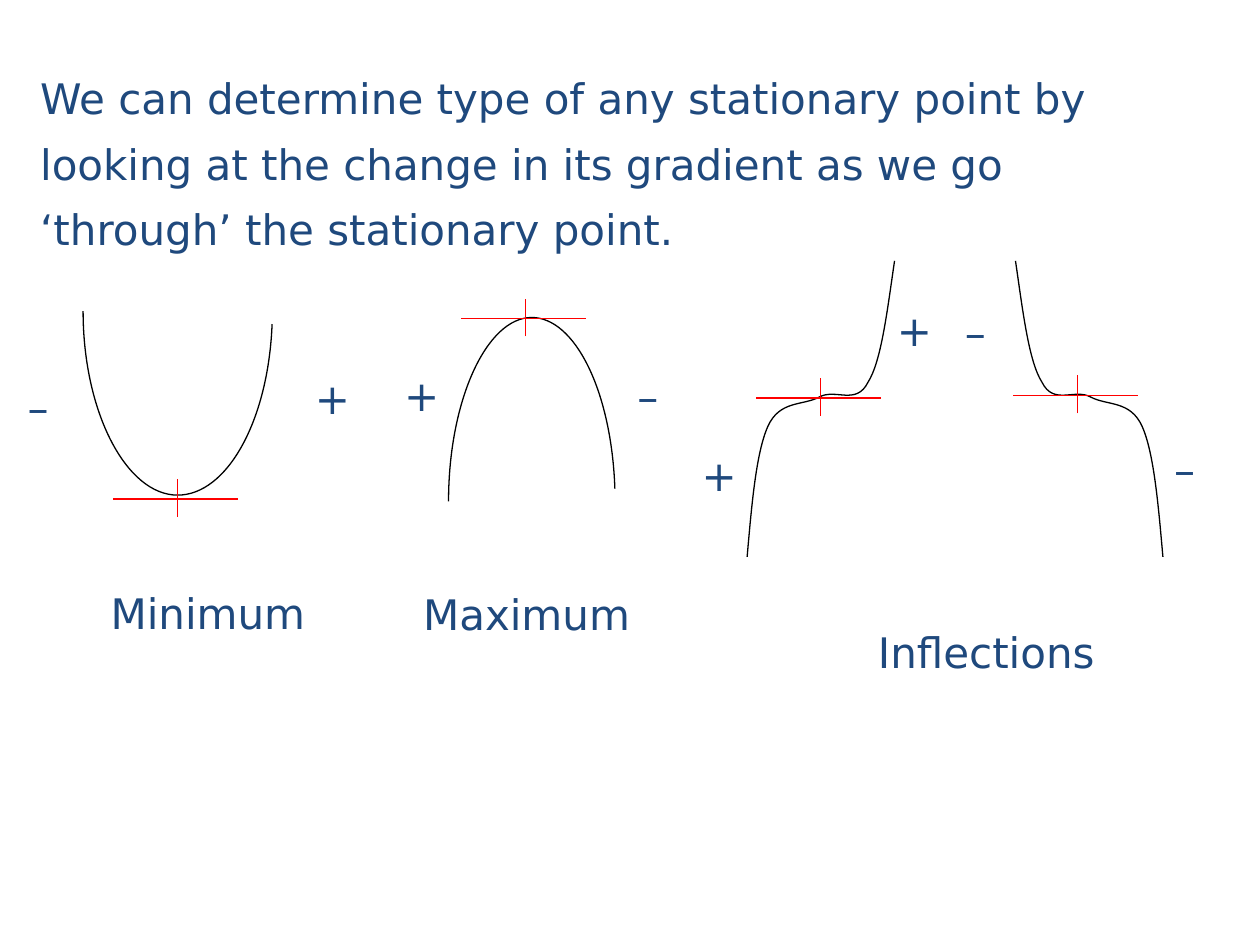
from lxml.etree import SubElement
from pptx import Presentation
from pptx.dml.color import RGBColor
from pptx.enum.shapes import MSO_CONNECTOR as Connector
from pptx.enum.text import MSO_AUTO_SIZE as AutoSize
from pptx.oxml.ns import qn
from pptx.util import Inches, Pt

NAVY = RGBColor(0x1F, 0x49, 0x7D)
RED = RGBColor(0xFF, 0x00, 0x00)
BLACK = RGBColor(0x00, 0x00, 0x00)
FONT = "DejaVu Sans"
LINE_WIDTH = Pt(0.75)

# Bezier points as fractions of the width and height of the curve's box
ARCH = [(0, 1), (0, 0.45), (0.23, 0), (0.5, 0),
        (0.76, 0), (0.98, 0.4), (1, 0.93)]
INFLECTION = [(0, 1), (0.03, 0.83), (0.06, 0.65), (0.14, 0.56),
              (0.22, 0.47), (0.38, 0.49), (0.49, 0.46),
              (0.6, 0.43), (0.74, 0.49), (0.82, 0.41),
              (0.91, 0.34), (0.95, 0.17), (1, 0)]


def bend_segments(curve):
    """Turn each three straight segments into one cubic Bezier segment."""
    outline = curve._element.find(".//" + qn("a:path"))
    segments = outline.findall(qn("a:lnTo"))
    for first in range(0, len(segments), 3):
        bezier = SubElement(outline, qn("a:cubicBezTo"))
        for segment in segments[first:first + 3]:
            bezier.append(segment[0])
            outline.remove(segment)


def add_curve(slide, controls, left, top, width, height,
              flip_x=False, flip_y=False):
    points = [(Inches(left + width * (1 - x if flip_x else x)),
               Inches(top + height * (1 - y if flip_y else y)))
              for x, y in controls]
    builder = slide.shapes.build_freeform(*points[0], scale=1.0)
    builder.add_line_segments(points[1:], close=False)
    curve = builder.convert_to_shape()
    bend_segments(curve)
    curve.shadow.inherit = False
    curve.fill.background()
    curve.line.color.rgb = BLACK
    curve.line.width = LINE_WIDTH


def add_line(group, *ends):
    connector = group.shapes.add_connector(
        Connector.STRAIGHT, *[Inches(value) for value in ends])
    connector.line.color.rgb = RED
    connector.line.width = LINE_WIDTH
    SubElement(connector._element.spPr, qn("a:effectLst"))


def add_tangent(slide, x, y):
    """Mark the stationary point at (x, y) with a flat tangent and a tick."""
    group = slide.shapes.add_group_shape()
    add_line(group, x - 0.51, y, x + 0.48, y)
    add_line(group, x, y + 0.14, x, y - 0.16)


def add_text(slide, text, left, top, width, height=0.5, line_spacing=1.0):
    box = slide.shapes.add_textbox(
        Inches(left), Inches(top), Inches(width), Inches(height))
    text_frame = box.text_frame
    text_frame.word_wrap = True
    text_frame.auto_size = AutoSize.SHAPE_TO_FIT_TEXT
    text_frame.text = text
    paragraph = text_frame.paragraphs[0]
    paragraph.line_spacing = line_spacing
    font = paragraph.runs[0].font
    font.name = FONT
    font.size = Pt(24)
    font.color.rgb = NAVY


def add_turning_point(slide, name, left, top, width, height,
                      tangent, signs, label, is_minimum=False):
    """Draw an arch with its tangent, the signs on both sides and its name."""
    add_curve(slide, ARCH, left, top, width, height, flip_y=is_minimum)
    add_tangent(slide, *tangent)
    for sign, x, y, sign_width in signs:
        add_text(slide, sign, x, y, sign_width)
    add_text(slide, name, *label, 1.86)


def add_inflection(slide, sign, left, top, width, height,
                   tangent, sign_width, sign_places, falling=False):
    add_curve(slide, INFLECTION, left, top, width, height, flip_x=falling)
    add_tangent(slide, *tangent)
    for x, y in sign_places:
        add_text(slide, sign, x, y, sign_width)


def main():
    presentation = Presentation()
    presentation.slide_width = Inches(10)
    presentation.slide_height = Inches(7.5)
    slide = presentation.slides.add_slide(presentation.slide_layouts[6])

    add_text(slide, "We can determine type of any stationary point by looking "
             "at the change in its gradient as we go ‘through’ the "
             "stationary point.", 0.22, 0.41, 9.32, 1.66, line_spacing=1.3)
    add_turning_point(slide, "Minimum", 0.66, 2.47, 1.5, 1.46, (1.41, 3.96),
                      [("–", 0.12, 2.98, 0.59), ("+", 2.4, 2.91, 0.54)],
                      (0.78, 4.61), is_minimum=True)
    add_turning_point(slide, "Maximum", 3.56, 2.52, 1.32, 1.46, (4.17, 2.53),
                      [("+", 3.11, 2.88, 0.52), ("–", 4.96, 2.89, 0.52)],
                      (3.26, 4.62))
    add_inflection(slide, "+", 5.93, 2.07, 1.17, 2.35, (6.51, 3.16),
                   0.68, [(5.47, 3.52), (7.02, 2.37)])
    add_inflection(slide, "–", 8.06, 2.07, 1.17, 2.35, (8.55, 3.14),
                   0.56, [(7.56, 2.38), (9.22, 3.47)], falling=True)
    add_text(slide, "Inflections", 6.87, 4.92, 2.97)

    presentation.save("out.pptx")


if __name__ == "__main__":
    main()
